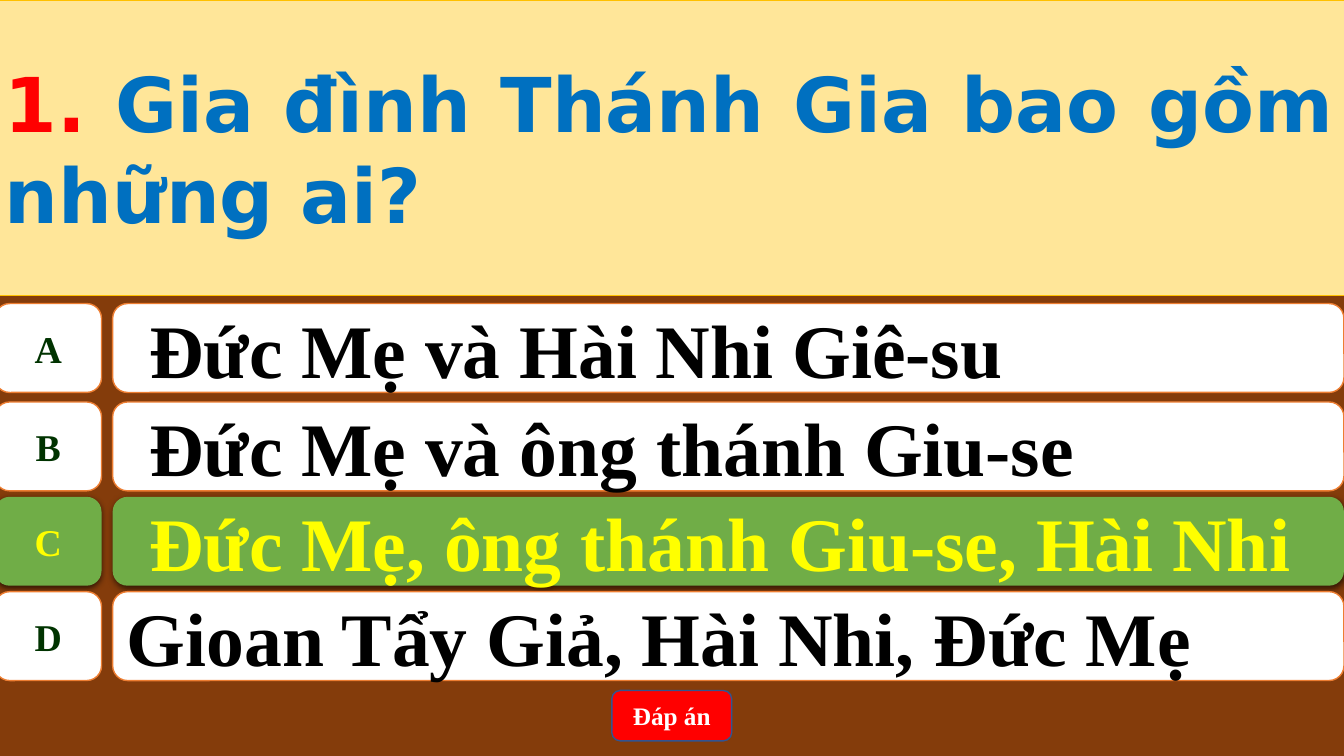
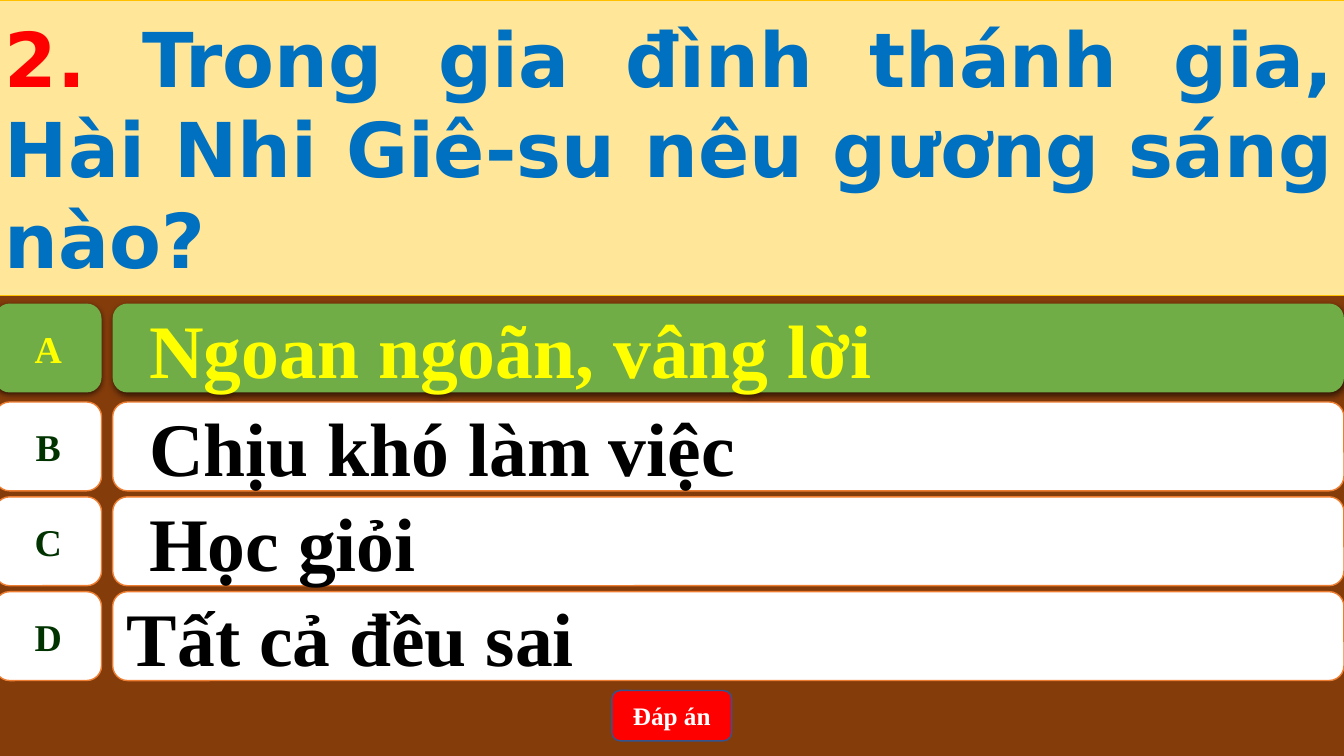
from dataclasses import dataclass

from lxml.etree import SubElement
from pptx import Presentation
from pptx.dml.color import RGBColor
from pptx.enum.shapes import MSO_SHAPE
from pptx.enum.text import MSO_ANCHOR, MSO_AUTO_SIZE, PP_ALIGN
from pptx.oxml.ns import qn
from pptx.util import Cm, Pt


@dataclass(frozen=True)
class Theme:
    """Colours, fonts and type sizes of the quiz."""
    backdrop: str = "843C0B"
    band: str = "FFE699"
    band_edge: str = "FFC000"
    number: str = "FF0000"
    question: str = "0070C0"
    row: str = "FFFFFF"
    row_edge: str = "ED7D31"
    letter: str = "003300"
    answer: str = "000000"
    correct: str = "70AD47"
    correct_text: str = "FFFF00"
    button: str = "FF0000"
    button_edge: str = "325491"
    button_text: str = "FFFFFF"
    question_font: str = "DejaVu Sans"
    answer_font: str = "Times New Roman"
    large: int = 54
    medium: int = 27
    small: int = 18


THEME = Theme()
SLIDE_BOX = (0, 0, 33.87, 19.05)
QUESTION_BOX = (-0.13, 0, 34.01, 7.44)
ROW_TOPS = (7.65, 10.13, 12.52, 14.91)
ROW_LEFT, ROW_WIDTH, ROW_HEIGHT = -0.13, 34, 2.24
LETTER_WIDTH, LETTER_GAP = 2.69, 0.28
BUTTON_BOX = (15.42, 17.4, 3.02, 1.27)

QUESTIONS = (
    ("1. ", "Gia đình Thánh Gia bao gồm những ai?",
     ("Đức Mẹ và Hài Nhi Giê-su", "Đức Mẹ và ông thánh Giu-se",
      "Đức Mẹ, ông thánh Giu-se, Hài Nhi", "Gioan Tẩy Giả, Hài Nhi, Đức Mẹ"), "C"),
    ("2. ", "Trong gia đình thánh gia, Hài Nhi Giê-su nêu gương sáng nào?",
     ("Ngoan ngoãn, vâng lời", "Chịu khó làm việc", "Học giỏi", "Tất cả đều sai"), "A"),
)


def write(shape, text, *, color, size, font=THEME.answer_font,
          align=PP_ALIGN.CENTER, wrap=True, hanging=False):
    """Append a bold run to the shape's paragraph and format both."""
    frame = shape.text_frame
    frame.auto_size = MSO_AUTO_SIZE.NONE
    frame.word_wrap = wrap
    frame.vertical_anchor = MSO_ANCHOR.MIDDLE
    paragraph = frame.paragraphs[0]
    paragraph.alignment = align
    if hanging:
        properties = paragraph._p.get_or_add_pPr()
        properties.set("marL", str(Cm(1.27)))
        properties.set("indent", str(Cm(-0.71)))
    run = paragraph.add_run()
    run.text = text
    run.font.name, run.font.size, run.font.bold = font, Pt(size), True
    run.font.color.rgb = RGBColor.from_string(color)


def paint(shape, fill, edge=None, weight=1):
    """Give a shape its fill and its outline, if any."""
    shape.fill.solid()
    shape.fill.fore_color.rgb = RGBColor.from_string(fill)
    if edge:
        shape.line.color.rgb = RGBColor.from_string(edge)
        shape.line.width = Pt(weight)
    else:
        shape.line.fill.background()


def cast_shadow(shape):
    """Drop a soft black shadow below a shape."""
    effects = shape._element.spPr.find(qn("a:effectLst"))
    shadow = SubElement(effects, qn("a:outerShdw"), blurRad=str(Pt(4.5)),
                        dist=str(Pt(1.5)), dir="5400000", algn="ctr", rotWithShape="0")
    black = SubElement(shadow, qn("a:srgbClr"), val="000000")
    SubElement(black, qn("a:alpha"), val="63000")


def add_panel(slide, preset, box, fill, edge=None):
    """Add a painted preset shape in a box given in centimetres."""
    panel = slide.shapes.add_shape(preset, *map(Cm, box))
    panel.shadow.inherit = False
    paint(panel, fill, edge)
    return panel


def prepare_layout(deck):
    """Set the backdrop and the title place that all questions share."""
    layout = deck.slide_layouts[5]
    layout.background.fill.solid()
    layout.background.fill.fore_color.rgb = RGBColor.from_string(THEME.backdrop)
    return layout


def add_question(slide, box, number, question):
    """Turn the title into the question band."""
    band = slide.shapes.title
    band.left, band.top, band.width, band.height = map(Cm, box)
    paint(band, THEME.band, THEME.band_edge, 0.5)
    for text, color in ((number, THEME.number), (question, THEME.question)):
        write(band, text, color=color, size=THEME.large,
              font=THEME.question_font, align=PP_ALIGN.JUSTIFY)


def add_answer(slide, box, letter, answer, correct, hanging):
    """Add a lettered answer row, highlighted when it is correct."""
    left, top, width, height = box
    offset = LETTER_WIDTH + LETTER_GAP
    fill, edge = (THEME.correct, None) if correct else (THEME.row, THEME.row_edge)
    answer_panel = add_panel(slide, MSO_SHAPE.ROUNDED_RECTANGLE,
                             (left + offset, top, width - offset, height), fill, edge)
    letter_panel = add_panel(slide, MSO_SHAPE.FLOWCHART_ALTERNATE_PROCESS,
                             (left, top, LETTER_WIDTH, height), fill, edge)
    write(answer_panel, answer, color=THEME.correct_text if correct else THEME.answer,
          size=THEME.large, align=PP_ALIGN.LEFT, hanging=hanging)
    write(letter_panel, letter, color=THEME.correct_text if correct else THEME.letter,
          size=THEME.medium, wrap=False)
    if correct:
        cast_shadow(answer_panel)
        cast_shadow(letter_panel)


def add_button(slide, box):
    """Add the button that asks for the answer."""
    button = add_panel(slide, MSO_SHAPE.ROUNDED_RECTANGLE, box,
                       THEME.button, THEME.button_edge)
    write(button, "Đáp án", color=THEME.button_text, size=THEME.small)


def add_quiz_slide(deck, layout, number, question, answers, correct_letter):
    """Build one question with its four answers."""
    slide = deck.slides.add_slide(layout)
    add_question(slide, QUESTION_BOX, number, question)
    for letter, top, answer in zip("ABCD", ROW_TOPS, answers):
        add_answer(slide, (ROW_LEFT, top, ROW_WIDTH, ROW_HEIGHT), letter, answer,
                   correct=letter == correct_letter, hanging=letter != "D")
    add_button(slide, BUTTON_BOX)


def main():
    """Build and save the quiz."""
    deck = Presentation()
    deck.slide_width, deck.slide_height = map(Cm, SLIDE_BOX[2:])
    layout = prepare_layout(deck)
    for entry in QUESTIONS:
        add_quiz_slide(deck, layout, *entry)
    deck.save("out.pptx")


if __name__ == "__main__":
    main()
